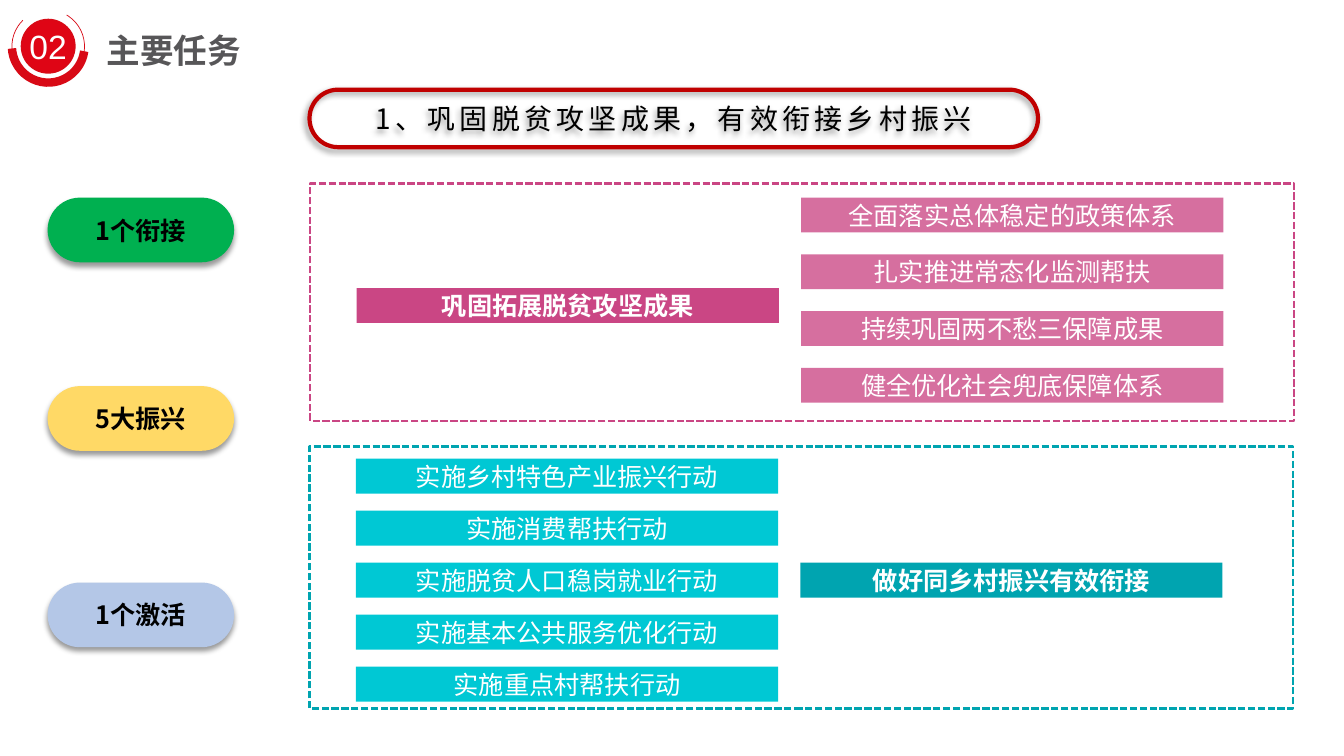
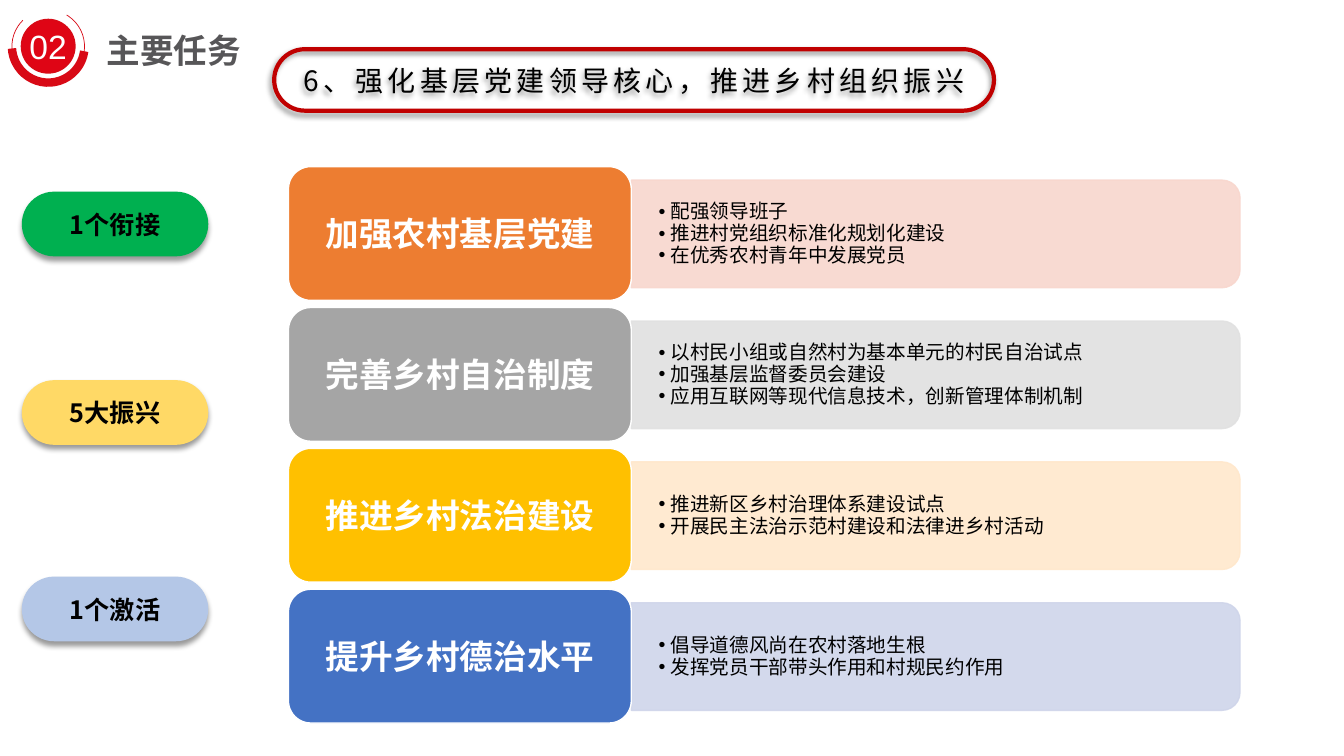
from dataclasses import dataclass

from lxml import etree
from pptx import Presentation
from pptx.dml.color import RGBColor
from pptx.enum.dml import MSO_LINE
from pptx.enum.shapes import MSO_SHAPE
from pptx.enum.text import MSO_ANCHOR, MSO_AUTO_SIZE, PP_ALIGN
from pptx.oxml.ns import qn
from pptx.util import Cm, Pt

ARC = MSO_SHAPE.ARC
OVAL = MSO_SHAPE.OVAL
RECT = MSO_SHAPE.RECTANGLE
ROUND = MSO_SHAPE.ROUNDED_RECTANGLE
ROUND_TOP = MSO_SHAPE.ROUND_2_SAME_RECTANGLE
DASH = MSO_LINE.SQUARE_DOT
MIDDLE = MSO_ANCHOR.MIDDLE
LEFT, CENTER = PP_ALIGN.LEFT, PP_ALIGN.CENTER
NO_FIT = MSO_AUTO_SIZE.NONE
TITLE_ONLY, FOUR_LISTS = 5, 4


@dataclass(frozen=True)
class Theme:
    """Colours, fonts and type sizes of the deck."""
    font: str = "Noto Sans CJK SC"
    number_font: str = "Arial"
    title: str = "575658"
    ink: str = "000000"
    white: str = "FFFFFF"
    badge: str = "DF0515"
    ring: str = "D80A16"
    banner: str = "C00000"
    pink: str = "CA4684"
    light_pink: str = "D66F9F"
    teal: str = "00A4B0"
    light_teal: str = "00C8D4"
    heading_size: int = 24
    banner_size: int = 20
    label_size: int = 18
    list_size: int = 14


@dataclass(frozen=True)
class Box:
    """A rectangle in centimetres."""
    left: float
    top: float
    width: float
    height: float

    def inner(self, left, top, width, height):
        """Return a box given relative to this one."""
        return Box(self.left + left, self.top + top, width, height)

    def emu(self):
        """Return the four lengths for python-pptx."""
        return Cm(self.left), Cm(self.top), Cm(self.width), Cm(self.height)


THEME = Theme()
STAGES = [("1个衔接", "00B050", 0), ("5大振兴", "FFD966", 4.75), ("1个激活", "B4C7E7", 9.7)]
CONSOLIDATE = ["全面落实总体稳定的政策体系", "扎实推进常态化监测帮扶",
               "持续巩固两不愁三保障成果", "健全优化社会兜底保障体系"]
CONNECT = ["实施乡村特色产业振兴行动", "实施消费帮扶行动", "实施脱贫人口稳岗就业行动",
           "实施基本公共服务优化行动", "实施重点村帮扶行动"]
GOVERNANCE = [
    ("加强农村基层党建", "ED7D31", "F8D7CE",
     ["配强领导班子", "推进村党组织标准化规划化建设", "在优秀农村青年中发展党员"]),
    ("完善乡村自治制度", "A5A5A5", "E1E1E1",
     ["以村民小组或自然村为基本单元的村民自治试点", "加强基层监督委员会建设",
      "应用互联网等现代信息技术，创新管理体制机制"]),
    ("推进乡村法治建设", "FFC000", "FFE8CC",
     ["推进新区乡村治理体系建设试点", "开展民主法治示范村建设和法律进乡村活动"]),
    ("提升乡村德治水平", "4472C4", "CFD5EA",
     ["倡导道德风尚在农村落地生根", "发挥党员干部带头作用和村规民约作用"]),
]


def add_run(paragraph, text, size, color, bold=False, font=THEME.font, spacing=0):
    """Append one formatted run."""
    run = paragraph.add_run()
    run.text = text
    run.font.size = Pt(size)
    run.font.bold = bold
    run.font.color.rgb = RGBColor.from_string(color)
    run.font.name = font
    properties = run.font._element
    etree.SubElement(properties, qn("a:ea")).set("typeface", font)
    if spacing:
        properties.set("spc", str(spacing * 100))


def set_frame(shape, side=0.0, edge=0.0, wrap=True):
    """Set insets, anchor and wrapping, and return the text frame."""
    frame = shape.text_frame
    frame.auto_size = NO_FIT
    frame.word_wrap = wrap
    frame.vertical_anchor = MIDDLE
    frame.margin_left = frame.margin_right = Cm(side)
    frame.margin_top = frame.margin_bottom = Cm(edge)
    return frame


def add_block(slide, kind, box, fill=None, line=None, width=1.0):
    """Add a preset shape with a plain fill and outline."""
    block = slide.shapes.add_shape(kind, *box.emu())
    block.shadow.inherit = False
    if fill:
        block.fill.solid()
        block.fill.fore_color.rgb = RGBColor.from_string(fill)
    else:
        block.fill.background()
    if line:
        block.line.color.rgb = RGBColor.from_string(line)
        block.line.width = Pt(width)
    else:
        block.line.fill.background()
    return block


def add_label(block, text, size, color, wrap=True, **style):
    """Write one centred line in a shape."""
    paragraph = set_frame(block, wrap=wrap).paragraphs[0]
    paragraph.alignment = CENTER
    add_run(paragraph, text, size, color, **style)


def add_shadow(block, angle):
    """Give a shape a soft outer shadow."""
    effects = block._element.spPr.find(qn("a:effectLst"))
    shadow = etree.SubElement(effects, qn("a:outerShdw"), blurRad=str(Pt(4)),
                              dist=str(Pt(3)), dir=str(angle * 60000), rotWithShape="0")
    color = etree.SubElement(shadow, qn("a:srgbClr"), val=THEME.ink)
    etree.SubElement(color, qn("a:alpha"), val="40000")


def set_opacity(block, percent):
    """Make the fill and outline of a shape translucent."""
    for color in block._element.spPr.iter(qn("a:srgbClr")):
        etree.SubElement(color, qn("a:alpha"), val=str(percent * 1000))


def draw_header(slide, box):
    """Place the numbered badge and the slide title."""
    title = slide.shapes.title
    title.left, title.top, title.width, title.height = box.inner(2.21, 0.41, 11.28, 1.19).emu()
    paragraph = set_frame(title, 0.18, 0.08).paragraphs[0]
    paragraph.alignment = LEFT
    add_run(paragraph, "主要任务", THEME.heading_size, THEME.title, bold=True)

    badge = add_block(slide, OVAL, box.inner(0.24, 0.24, 1.35, 1.35), THEME.badge, THEME.ring)
    add_label(badge, "02", THEME.heading_size, THEME.white, wrap=False, font=THEME.number_font)
    for start, end, width in [(34.06, 205.29, 0.5), (74.49, 175.71, 6)]:
        ring = add_block(slide, ARC, box.inner(0, 0, 1.83, 1.83), None, THEME.ring, width)
        ring.adjustments[0], ring.adjustments[1] = start, end
        ring.rotation = 243.7


def draw_stages(slide, box):
    """Stack the three stage pills down the left side."""
    for name, color, drop in STAGES:
        pill = add_block(slide, ROUND, box.inner(0, drop, box.width, 1.63), color)
        pill.adjustments[0] = 0.5
        add_shadow(pill, 90)
        add_label(pill, name, THEME.label_size, THEME.ink, bold=True)


def draw_banner(slide, box, text):
    """Draw the outlined task banner."""
    banner = add_block(slide, ROUND, box, None, THEME.banner, 3)
    banner.adjustments[0] = 0.5
    add_shadow(banner, 135)
    add_label(banner, text, THEME.banner_size, THEME.ink, spacing=3)


def draw_panel(slide, box, goal, actions, colors, columns, tops, pitch):
    """Draw a dashed panel with one goal bar and a column of action bars."""
    strong, light = colors
    goal_left, action_left = columns
    goal_top, action_top = tops
    bars = [(goal, goal_left, goal_top, strong, True)]
    bars += [(action, action_left, action_top + row * pitch, light, False)
             for row, action in enumerate(actions)]
    for text, left, top, color, bold in bars:
        bar = add_block(slide, RECT, box.inner(left, top, 10.64, 0.88), color)
        add_label(bar, text, THEME.label_size, THEME.white, bold=bold)
    border = add_block(slide, RECT, box, None, strong, 1.75)
    border.line.dash_style = DASH


def fill_list(body, box, items):
    """Place a body placeholder and write its bullets."""
    body.left, body.top, body.width, body.height = box.emu()
    frame = set_frame(body, 0.69, 0.36)
    for row, item in enumerate(items):
        paragraph = frame.add_paragraph() if row else frame.paragraphs[0]
        properties = paragraph._p.get_or_add_pPr()
        properties.set("marL", str(Cm(0.3)))
        properties.set("indent", str(Cm(-0.3)))
        etree.SubElement(properties, qn("a:buFont"), typeface=THEME.number_font)
        etree.SubElement(properties, qn("a:buChar"), char="•")
        paragraph.alignment = LEFT
        paragraph.line_spacing = 0.92
        paragraph.space_before = paragraph.space_after = Pt(0)
        add_run(paragraph, item, THEME.list_size, THEME.ink)


def draw_measure(slide, box, body, measure):
    """Draw one row: a coloured label and its list on a pale band."""
    name, color, pale, items = measure
    label_width, band_width, band_height = 8.64, 15.34, 2.71
    shift = (band_width - band_height) / 2
    upright = box.inner(label_width + shift, 0.34 - shift, band_height, band_width)
    band = add_block(slide, ROUND_TOP, upright, pale, pale)
    band.rotation = 90
    set_opacity(band, 90)
    fill_list(body, box.inner(label_width, 0.48, 15.2, 2.44), items)
    band._element.addnext(body._element)
    label = add_block(slide, ROUND, box.inner(0, 0, label_width, box.height), color, THEME.white)
    add_label(label, name, THEME.heading_size, THEME.white, bold=True)


def start_slide(deck, layout, stages, banner, task):
    """Add a slide with the header, stage pills and banner."""
    slide = deck.slides.add_slide(deck.slide_layouts[layout])
    draw_header(slide, Box(0.3, 0.25, 13.5, 1.83))
    draw_stages(slide, stages)
    draw_banner(slide, banner, task)
    return slide


def build_connection_slide(deck):
    """Build the slide on consolidation and connection."""
    slide = start_slide(deck, TITLE_ONLY, Box(1.2, 4.98, 4.7, 11.33),
                        Box(7.8, 2.26, 18.36, 1.45), "1、巩固脱贫攻坚成果，有效衔接乡村振兴")
    near, far = 1.17, 12.37
    draw_panel(slide, Box(7.82, 4.62, 24.79, 5.99), "巩固拓展脱贫攻坚成果", CONSOLIDATE,
               (THEME.pink, THEME.light_pink), (near, far), (2.64, 0.36), 1.43)
    draw_panel(slide, Box(7.8, 11.25, 24.79, 6.6), "做好同乡村振兴有效衔接", CONNECT,
               (THEME.teal, THEME.light_teal), (far, near), (2.93, 0.31), 1.31)


def build_governance_slide(deck):
    """Build the slide on rural organisation."""
    slide = start_slide(deck, FOUR_LISTS, Box(0.55, 4.83, 4.7, 11.33),
                        Box(6.91, 1.24, 18.14, 1.55), "6、强化基层党建领导核心，推进乡村组织振兴")
    bodies = list(slide.placeholders)[1:]
    for row, (body, measure) in enumerate(zip(bodies, GOVERNANCE)):
        draw_measure(slide, Box(7.27, 4.2 + row * 3.55, 23.98, 3.37), body, measure)


def main():
    """Build and save the deck."""
    deck = Presentation()
    deck.slide_width, deck.slide_height = Cm(33.87), Cm(19.05)
    build_connection_slide(deck)
    build_governance_slide(deck)
    deck.save("out.pptx")


if __name__ == "__main__":
    main()
